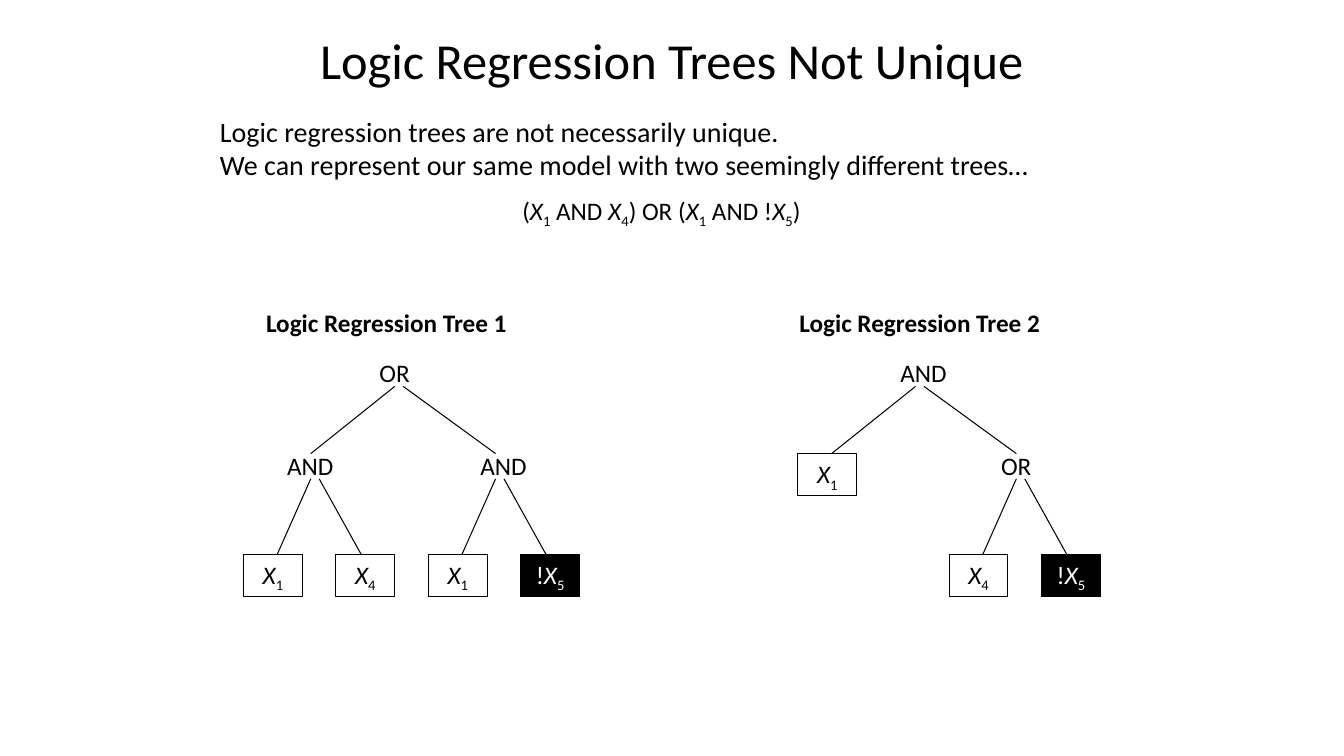
import itertools

import pptx
import pptx.dml.color
import pptx.enum.shapes
import pptx.enum.text
import pptx.util
from lxml import etree

PX = 9525
BLACK = "000000"
WHITE = "FFFFFF"
LEFT = pptx.enum.text.PP_ALIGN.LEFT
CENTER = pptx.enum.text.PP_ALIGN.CENTER
TOP = pptx.enum.text.MSO_ANCHOR.TOP
MIDDLE = pptx.enum.text.MSO_ANCHOR.MIDDLE

# word, left, top, x of the fork below it, x of its two children
OPERATORS = [
    ("OR", 352, 336, 376, (296, 472)),
    ("AND", 264, 424, 296, (264, 344)),
    ("AND", 448, 424, 472, (440, 520)),
    ("AND", 848, 336, 872, (792, 968)),
    ("OR", 944, 424, 968, (936, 1016)),
]
LEAVES = [
    ("X1", 232, 528),
    ("X4", 320, 528),
    ("X1", 408, 528),
    ("!X5", 496, 528),
    ("X1", 760, 432),
    ("X4", 904, 528),
    ("!X5", 992, 528),
]


def px(*lengths):
    return [pptx.util.Emu(length * PX) for length in lengths]


def color(value):
    return pptx.dml.color.RGBColor.from_string(value)


def style_span(span, size, ink=BLACK, bold=False):
    span.font.name = "Calibri"
    span.font.size = pptx.util.Pt(size)
    span.font.bold = bold
    span.font.color.rgb = color(ink)


def char_kind(char):
    return "variable" if char == "X" else "index" if char.isdigit() else "plain"


def write_formula(para, formula, ink=BLACK):
    """Set every X in italics and every digit as a subscript."""
    for kind, chars in itertools.groupby(formula, char_kind):
        span = para.add_run()
        span.text = "".join(chars)
        style_span(span, 18, ink)
        span.font.italic = kind == "variable"
        if kind == "index":
            span.font._element.set("baseline", "-25000")


def add_text(slide, text, bounds, size=18, align=LEFT, bold=False, wrap=True, anchor=TOP):
    box = slide.shapes.add_textbox(*px(*bounds))
    frame = box.text_frame
    frame.text = text
    frame.word_wrap = wrap
    frame.vertical_anchor = anchor
    for para in frame.paragraphs:
        para.alignment = align
        for span in para.runs:
            style_span(span, size, bold=bold)
    return box


def add_edge(slide, *ends):
    edge = slide.shapes.add_connector(pptx.enum.shapes.MSO_CONNECTOR.STRAIGHT, *px(*ends))
    edge.line.color.rgb = color(BLACK)
    edge.line.width = pptx.util.Pt(0.75)
    properties = edge._element.spPr
    etree.SubElement(properties, pptx.oxml.ns.qn("a:effectLst"))


def add_operator(slide, word, left, top, fork, children):
    """Draw an operator and the two edges down to its children."""
    width = 63 if word == "AND" else 48
    add_text(slide, word, (left, top, width, 39), wrap=False)
    child_top = 432 if top == 336 else 528
    for side, child in enumerate(children):
        add_edge(slide, fork + 8 * side, top + 32, child, child_top)


def add_leaf(slide, formula, left, top):
    """Draw a variable in a box, which is black when negated."""
    negated = formula.startswith("!")
    box = slide.shapes.add_shape(pptx.enum.shapes.MSO_SHAPE.RECTANGLE, *px(left, top, 56, 40))
    box.shadow.inherit = False
    if negated:
        box.fill.solid()
        box.fill.fore_color.rgb = color(BLACK)
    else:
        box.fill.background()
    box.line.color.rgb = color(BLACK)
    box.line.width = pptx.util.Pt(0.75)
    box.text_frame.word_wrap = True
    box.text_frame.vertical_anchor = TOP
    para = box.text_frame.paragraphs[0]
    para.alignment = CENTER
    write_formula(para, formula, WHITE if negated else BLACK)


def add_intro(slide):
    text = (
        "Logic regression trees are not necessarily unique.\n"
        "We can represent our same model with two seemingly different trees…"
    )
    box = add_text(slide, text, (200, 104, 797, 116), size=20, wrap=False)
    para = box.text_frame.add_paragraph()
    para.alignment = LEFT
    para.space_before = pptx.util.Pt(10)
    para._p.get_or_add_pPr().set("marL", str(288 * PX))
    write_formula(para, "(X1 AND X4) OR (X1 AND !X5)")


def main():
    deck = pptx.Presentation()
    deck.slide_width, deck.slide_height = px(1280, 720)
    slide = deck.slides.add_slide(deck.slide_layouts[6])

    title = add_text(slide, "Logic Regression Trees Not Unique", (208, 0, 864, 120),
                     size=36, align=CENTER, anchor=MIDDLE)
    title.text_frame.paragraphs[0].line_spacing = 0.9
    add_intro(slide)

    for number, left, width in [(1, 240, 256), (2, 736, 280)]:
        add_text(slide, f"Logic Regression Tree {number}", (left, 288, width, 39),
                 align=CENTER, bold=True)
    for operator in OPERATORS:
        add_operator(slide, *operator)
    for leaf in LEAVES:
        add_leaf(slide, *leaf)

    deck.save("out.pptx")


if __name__ == "__main__":
    main()
